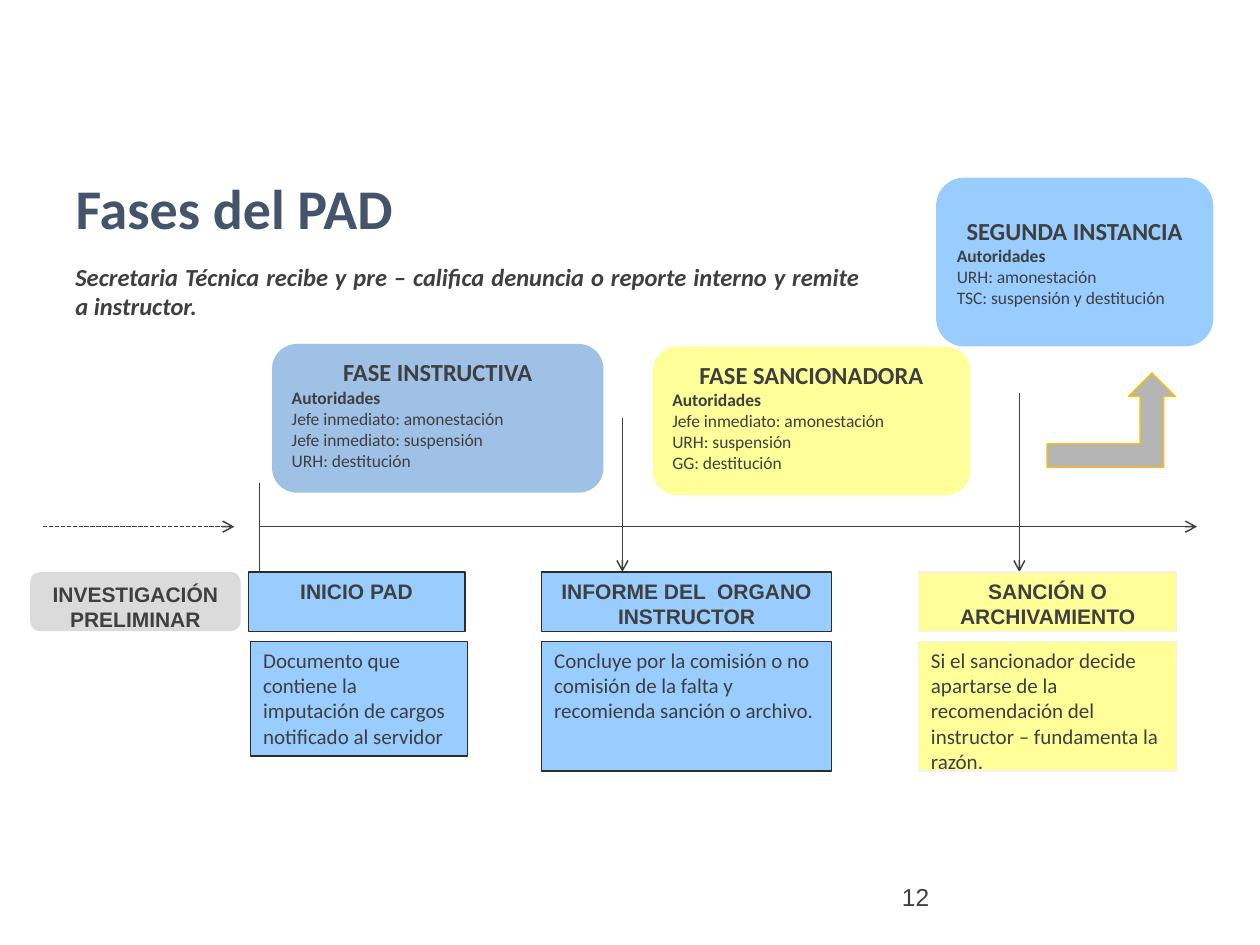
from lxml import etree
from pptx import Presentation
from pptx.dml.color import RGBColor
from pptx.enum.dml import MSO_LINE
from pptx.enum.shapes import MSO_CONNECTOR, MSO_SHAPE
from pptx.enum.text import MSO_ANCHOR, PP_ALIGN
from pptx.oxml.ns import qn
from pptx.util import Inches, Pt

RECT, ROUND = MSO_SHAPE.RECTANGLE, MSO_SHAPE.ROUNDED_RECTANGLE
BENT_ARROW = MSO_SHAPE.BENT_UP_ARROW
LEFT, CENTER, JUSTIFY = PP_ALIGN.LEFT, PP_ALIGN.CENTER, PP_ALIGN.JUSTIFY
TOP, MIDDLE = MSO_ANCHOR.TOP, MSO_ANCHOR.MIDDLE
DASH = MSO_LINE.SQUARE_DOT

COLORS = {
    "title": "44546A", "ink": "3F3F3F", "edge": "2C2C2C", "pale": "F2F2F2",
    "blue": "99CCFF", "steel": "9EC1E5", "yellow": "FFFF99",
    "gray": "DBDBDB", "arrow": "B5B5B5", "gold": "FFC000",
}
TITLE = "Fases del PAD"
SUBTITLE = ("Secretaria Técnica recibe y pre – califica denuncia o reporte "
            "interno y remite a instructor.")
PAGE_NUMBER = "12"

PHASES = [
    ((2.16, 2.73, 2.63, 1.18), "steel", TOP, "FASE INSTRUCTIVA",
     ["Jefe inmediato: amonestación", "Jefe inmediato: suspensión", "URH: destitución"]),
    ((5.18, 2.75, 2.52, 1.18), "yellow", TOP, "FASE SANCIONADORA",
     ["Jefe inmediato: amonestación", "URH: suspensión", "GG: destitución"]),
    ((7.43, 1.41, 2.2, 1.34), "blue", MIDDLE, "SEGUNDA INSTANCIA",
     ["URH: amonestación", "TSC: suspensión y destitución"]),
]
AXIS_Y, LABEL_Y, LABEL_HEIGHT, DETAIL_Y = 4.18, 4.54, 0.47, 5.09
MILESTONES = [
    (1.97, 1.72, "blue", "edge", "INICIO PAD", 1.99, 0.91,
     "Documento que contiene la imputación de cargos notificado al servidor"),
    (4.3, 2.3, "blue", "edge", "INFORME DEL  ORGANO INSTRUCTOR", 4.3, 1.03,
     "Concluye por la comisión o no comisión de la falta y recomienda sanción o archivo."),
    (7.29, 2.05, "yellow", "pale", "SANCIÓN O ARCHIVAMIENTO", 7.29, 1.03,
     "Si el sancionador decide apartarse de la recomendación del instructor – "
     "fundamenta la razón."),
]
LINES = [
    ((2.06, AXIS_Y, 9.5, AXIS_Y), True, None),
    ((0.34, AXIS_Y, 1.86, AXIS_Y), True, DASH),
    ((2.06, 3.83, 2.06, LABEL_Y), False, None),
    ((4.94, 3.32, 4.94, LABEL_Y), True, None),
    ((8.09, 3.12, 8.09, LABEL_Y), True, None),
]


def color(name):
    return RGBColor.from_string(COLORS[name])


def write(shape, rows, anchor=TOP):
    frame = shape.text_frame
    frame.word_wrap = True
    frame.vertical_anchor = anchor
    frame.text = "\n".join(row[0] for row in rows)
    for para, (_, size, font, align, bold) in zip(frame.paragraphs, rows):
        para.alignment = align
        for span in para.runs:
            span.font.size = Pt(size)
            span.font.name = font
            span.font.bold = bold
            span.font.color.rgb = color("ink")


def add_block(page, kind, area, fill, edge=None):
    shape = page.shapes.add_shape(kind, *map(Inches, area))
    shape.shadow.inherit = False
    shape.fill.solid()
    shape.fill.fore_color.rgb = color(fill)
    if edge:
        shape.line.color.rgb = color(edge)
        shape.line.width = Pt(0.75)
    else:
        shape.line.fill.background()
    return shape


def add_line(page, ends, arrow, dash):
    line = page.shapes.add_connector(MSO_CONNECTOR.STRAIGHT, *map(Inches, ends))
    line.line.color.rgb = color("ink")
    line.line.width = Pt(0.85)
    if dash:
        line.line.dash_style = dash
    properties = line._element.spPr
    if arrow:
        etree.SubElement(properties.find(qn("a:ln")), qn("a:tailEnd"), type="arrow")
    etree.SubElement(properties, qn("a:effectLst"))


def add_label(page, kind, left, width, fill, edge, text):
    label = add_block(page, kind, (left, LABEL_Y, width, LABEL_HEIGHT), fill, edge)
    write(label, [(text, 12, "Arial", CENTER, True)])


def add_text(page, area, row):
    box = page.shapes.add_textbox(*map(Inches, area))
    write(box, [row])
    return box


def main():
    deck = Presentation()
    deck.slide_width, deck.slide_height = Inches(10), Inches(7.5)
    page = deck.slides.add_slide(deck.slide_layouts[5])

    title = page.shapes.title
    title.left, title.top, title.width, title.height = map(Inches, (0.5, 1.36, 9, 0.63))
    write(title, [(TITLE, 32, "Calibri", LEFT, True)], MIDDLE)
    heading = title.text_frame.paragraphs[0]
    heading.line_spacing = 0.9
    heading.runs[0].font.color.rgb = color("title")

    for area, fill, anchor, name, authorities in PHASES:
        rows = [(name, 14, "Calibri", CENTER, True),
                ("Autoridades", 10, "Calibri", LEFT, True)]
        rows += [(text, 10, "Calibri", LEFT, False) for text in authorities]
        write(add_block(page, ROUND, area, fill), rows, anchor)

    for ends, arrow, dash in LINES:
        add_line(page, ends, arrow, dash)
    add_block(page, BENT_ARROW, (8.31, 2.96, 1.02, 0.75), "arrow", "gold")

    add_label(page, ROUND, 0.24, 1.67, "gray", None, "INVESTIGACIÓN PRELIMINAR")
    for left, width, fill, edge, name, detail_left, height, text in MILESTONES:
        add_label(page, RECT, left, width, fill, edge, name)
        detail = add_block(page, RECT, (detail_left, DETAIL_Y, width, height), fill, edge)
        write(detail, [(text, 12, "Calibri", LEFT, False)])

    subtitle = add_text(page, (0.5, 2.03, 6.43, 0.57),
                        (SUBTITLE, 14, "Calibri", JUSTIFY, True))
    subtitle.text_frame.paragraphs[0].runs[0].font.italic = True
    add_text(page, (7.06, 6.95, 2.25, 0.4), (PAGE_NUMBER, 14, "Arial", LEFT, False))
    deck.save("out.pptx")


if __name__ == "__main__":
    main()
